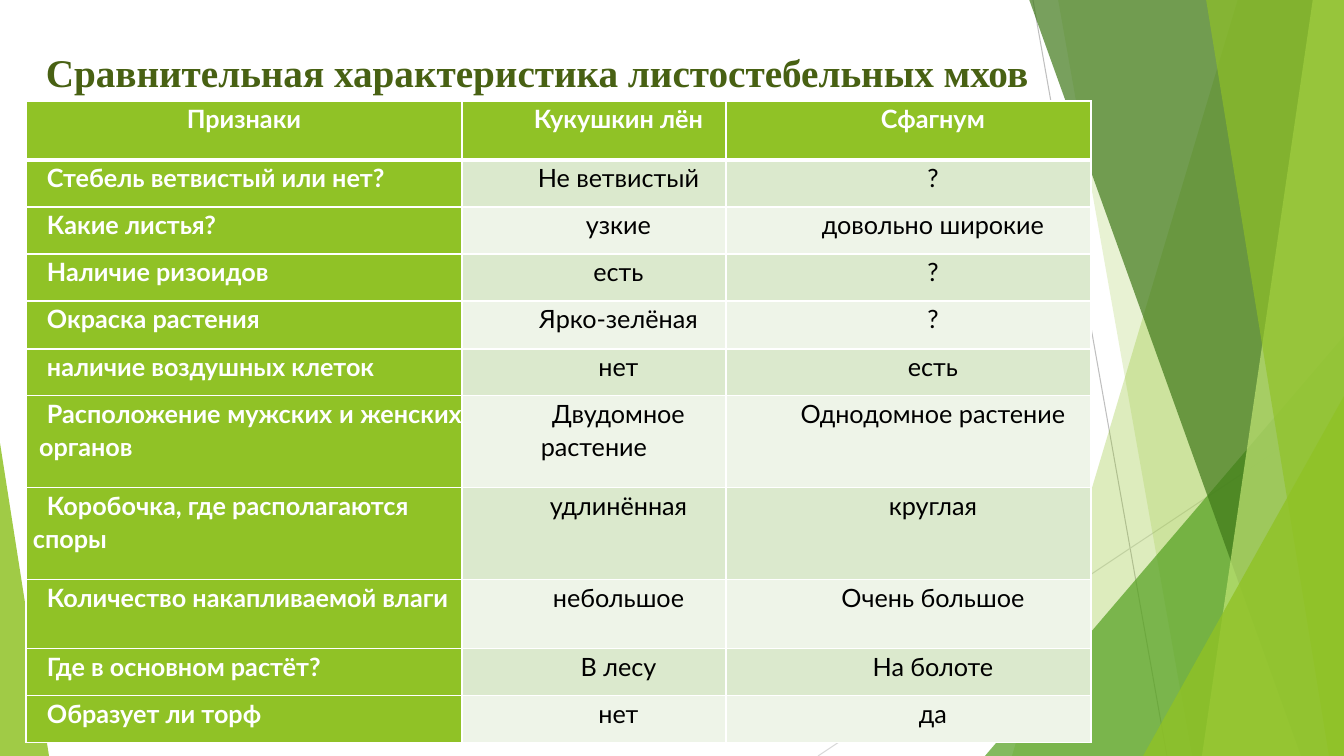
from lxml import etree
from pptx import Presentation, util as u
from pptx.dml.color import RGBColor
from pptx.enum import shapes, text
from pptx.oxml.ns import qn

# Content
TITLE = "Сравнительная характеристика листостебельных мхов"
ROWS = [
    ("Признаки", "Кукушкин лён", "Сфагнум"),
    ("Стебель ветвистый или нет?", "Не ветвистый", "?"),
    ("Какие листья?", "узкие", "довольно широкие"),
    ("Наличие ризоидов", "есть", "?"),
    ("Окраска растения", "Ярко-зелёная", "?"),
    ("наличие воздушных клеток", "нет", "есть"),
    ("Расположение мужских и женских  органов", "Двудомное растение", "Однодомное растение"),
    ("Коробочка, где располагаются споры", "удлинённая", "круглая"),
    ("Количество накапливаемой влаги", "небольшое", "Очень большое"),
    ("Где в основном растёт?", "В лесу", "На болоте"),
    ("Образует ли торф", "нет", "да"),
]
JUSTIFIED_ROW = 6

# Layout in px
PX = 914400 / 100.8
WIDTH, HEIGHT = 1344, 756
TITLE_BOX = (12, 43, 1050, 57)
TABLE_AT = (26, 101)
COLUMNS = [436, 264, 365]
HEIGHTS = [59, 47, 47, 47, 48, 47, 92, 92, 69, 47, 47]
LABEL_INSETS = {"left": 7, "top": 1, "right": 0, "bottom": 1}
VALUE_INSETS = {"left": 1, "top": 1, "right": 1, "bottom": 1}
INDENTS = [14, 49, 49]

# Colours
GREEN, WHITE, BLACK = "90C226", "FFFFFF", "000000"
BANDS = ["EEF4E8", "DBE9CD"]

# Decoration: rays as (x1, y1, x2, y2, colour)
RAYS = [(1033, 0, 1167, 756, "BFBFBF"), (1344, 406, 818, 756, "D9D9D9")]
# Facets: top-left x and bottom-left x of a band that reaches the right edge,
# or a (left, top, width, height, apex) right triangle; then colour and opacity
FACETS = [
    ((1238, 1012), GREEN, 30),
    ((1058, 1192), GREEN, 20),
    ((985, 336, 359, 420, 1), "54A021", 72),
    ((1029, 1301), "3F7819", 70),
    ((1313, 1202), "C0E474", 70),
    ((1206, 1329), GREEN, 65),
    ((1143, 396, 201, 360, 1), GREEN, 80),
    ((0, 443, 49, 313, 0), GREEN, 85),
]


def emu(*lengths):
    return [u.Emu(round(n * PX)) for n in lengths]


def rgb(value):
    return RGBColor.from_string(value)


def apply(target, values):
    for name, value in values.items():
        setattr(target, name, value)


def paint(shape_fill, colour, opacity=100):
    shape_fill.solid()
    shape_fill.fore_color.rgb = rgb(colour)
    if opacity < 100:
        tint = shape_fill._xPr.find(".//" + qn("a:srgbClr"))
        etree.SubElement(tint, qn("a:alpha"), val=str(opacity * 1000))


def write(paragraph, words, font, size, colour, bold):
    run = paragraph.add_run()
    run.text = words
    apply(run.font, {"name": font, "size": u.Pt(size), "bold": bold})
    run.font.color.rgb = rgb(colour)


def border(cell, widths):
    properties = cell._tc.get_or_add_tcPr()
    for place, (side, points) in enumerate(widths.items()):
        edge = etree.Element(qn("a:ln" + side), w=str(u.Pt(points)))
        solid = etree.SubElement(edge, qn("a:solidFill"))
        etree.SubElement(solid, qn("a:srgbClr"), val=WHITE)
        properties.insert(place, edge)


def alignment(row, column):
    if row == 0 or column > 0:
        return text.PP_ALIGN.CENTER
    return text.PP_ALIGN.JUSTIFY if row == JUSTIFIED_ROW else text.PP_ALIGN.LEFT


def draw_rays(slide):
    for *ends, colour in RAYS:
        ray = slide.shapes.add_connector(shapes.MSO_CONNECTOR.STRAIGHT, *emu(*ends))
        ray.line.color.rgb = rgb(colour)
        ray.line.width = u.Pt(0.75)
        etree.SubElement(ray._element.spPr, qn("a:effectLst"))


def draw_facets(slide):
    for outline, colour, opacity in FACETS:
        if len(outline) == 2:
            top, bottom = outline
            builder = slide.shapes.build_freeform(top, -1, scale=PX)
            builder.add_line_segments([(WIDTH, -1), (WIDTH, HEIGHT), (bottom, HEIGHT)])
            facet = builder.convert_to_shape()
        else:
            *box, apex = outline
            facet = slide.shapes.add_shape(
                shapes.MSO_SHAPE.ISOSCELES_TRIANGLE, *emu(*box))
            facet.adjustments[0] = apex
        paint(facet.fill, colour, opacity)
        facet.line.fill.background()
        facet.shadow.inherit = False


def draw_table(slide):
    frame = slide.shapes.add_table(
        len(ROWS), len(COLUMNS), *emu(*TABLE_AT, sum(COLUMNS), sum(HEIGHTS)))
    table = frame.table
    for column, width in zip(table.columns, emu(*COLUMNS)):
        column.width = width
    for row, height in zip(table.rows, emu(*HEIGHTS)):
        row.height = height
    for r, row in enumerate(ROWS):
        for c, words in enumerate(row):
            cell = table.cell(r, c)
            header, label = r == 0, c == 0
            strong = header or label
            insets = LABEL_INSETS if label and not header else VALUE_INSETS
            apply(cell, {"margin_" + side: emu(gap)[0] for side, gap in insets.items()})
            paint(cell.fill, GREEN if strong else BANDS[r % 2])
            border(cell, {"L": 1, "R": 1, "T": 3 if r == 1 else 1, "B": 3 if header else 1})
            paragraph = cell.text_frame.paragraphs[0]
            apply(paragraph, {
                "alignment": alignment(r, c),
                "line_spacing": 1.07,
                "space_after": u.Pt(8),
            })
            if not (header and label):
                paragraph._p.get_or_add_pPr().set("indent", str(emu(INDENTS[c])[0]))
            write(paragraph, words, "Lato", 18, WHITE if strong else BLACK, strong)


def place_title(slide):
    title = slide.shapes.title
    apply(title, dict(zip(("left", "top", "width", "height"), emu(*TITLE_BOX))))
    apply(title.text_frame, {
        "word_wrap": True,
        "auto_size": text.MSO_AUTO_SIZE.SHAPE_TO_FIT_TEXT,
        "vertical_anchor": text.MSO_ANCHOR.MIDDLE,
    })
    heading = title.text_frame.paragraphs[0]
    heading.alignment = text.PP_ALIGN.CENTER
    write(heading, TITLE, "Times New Roman", 28, "486113", True)


def main():
    deck = Presentation()
    deck.slide_width, deck.slide_height = emu(WIDTH, HEIGHT)
    slide = deck.slides.add_slide(deck.slide_layouts[5])
    place_title(slide)
    draw_rays(slide)
    draw_facets(slide)
    draw_table(slide)
    deck.save("out.pptx")


if __name__ == "__main__":
    main()
